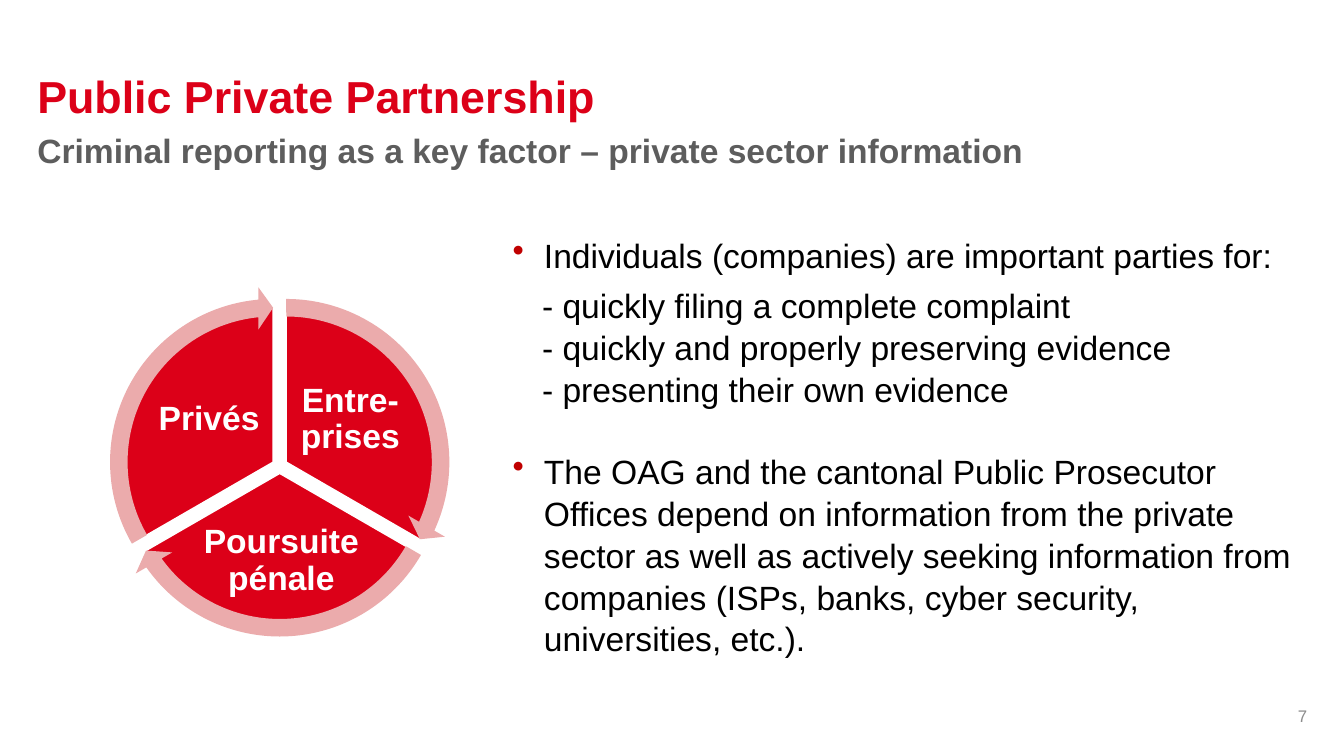
from math import cos, radians, sin

from lxml import etree
from pptx import Presentation
from pptx.dml.color import RGBColor
from pptx.enum import shapes, text
from pptx.oxml import ns
from pptx.util import Cm, Pt

COLORS = {
    "red": "DC0018", "pink": "EBABAC", "white": "FFFFFF", "black": "000000",
    "subtitle": "5D5D5D", "number": "8C8C8C", "bullet": "C00000",
}


def write(frame, wording, size=24, color="black", bold=False, align="LEFT",
          spacing=1.0, before=0, indent=0, bullet=False):
    """Fill the empty first paragraph, or add one; a newline is a line break."""
    para = frame.paragraphs[0]
    if para.runs:
        para = frame.add_paragraph()
    para.alignment = getattr(text.PP_ALIGN, align)
    para.line_spacing = spacing
    para.space_before = Pt(before)
    props = para._p.get_or_add_pPr()
    props.set("marL", str(Cm(indent)))
    props.set("indent", str(-Cm(indent) if bullet else 0))
    if bullet:
        tint = etree.SubElement(props, ns.qn("a:buClr"))
        etree.SubElement(tint, ns.qn("a:srgbClr"), val=COLORS["bullet"])
        etree.SubElement(props, ns.qn("a:buChar"), char="•")
    for row, line in enumerate(wording.split("\n")):
        if row:
            para.add_line_break()
        span = para.add_run()
        span.text = line
        span.font.name = "Arial"
        span.font.size = Pt(size)
        span.font.bold = bold
        span.font.color.rgb = RGBColor.from_string(COLORS[color])


def add_frame(left, top, width, height, anchor="MIDDLE", insets=(0.25, 0.13, 0.25, 0.13)):
    """Add a wrapping text box and return its text frame."""
    box = page.shapes.add_textbox(Cm(left), Cm(top), Cm(width), Cm(height))
    frame = box.text_frame
    frame.word_wrap = True
    frame.vertical_anchor = getattr(text.MSO_ANCHOR, anchor)
    frame.margin_left, frame.margin_top, frame.margin_right, frame.margin_bottom = map(Cm, insets)
    return frame


deck = Presentation()
deck.slide_width, deck.slide_height = Cm(33.87), Cm(19.05)
page = deck.slides.add_slide(deck.slide_layouts[6])

# Headings and page number
title = add_frame(0.94, 1.75, 32, 1.5, insets=(0, 0.13, 0.25, 0.13))
write(title, "Public Private Partnership", size=32, color="red", bold=True, spacing=0.9)
subtitle = add_frame(0.94, 3.25, 32, 1, anchor="TOP", insets=(0, 0.13, 0.25, 0.13))
write(subtitle, "Criminal reporting as a key factor – private sector information",
      color="subtitle", bold=True, spacing=0.9)
number = add_frame(24.94, 17.55, 8, 1, insets=(0.25, 0.13, 0, 0.13))
write(number, "7", size=12, color="number", align="RIGHT")

# Cycle: three sectors pushed out from a hub, each with an arrow around it
HUB_X, HUB_Y, PUSH = 7.05, 11.74, 0.19
PIE, RING = 7.85, 8.84
TURN = 0.6  # adjustment units per degree
sectors = [
    (270, "Entre-prises", (7.42, 9.4, 2.82, 2.34)),
    (30, "Poursuite pénale", (4.98, 13.11, 4.22, 2.06)),
    (150, "Privés", (3.86, 9.4, 2.82, 2.34)),
]


for kind, diameter, color in [("PIE", PIE, "red"), ("CIRCULAR_ARROW", RING, "pink")]:
    for start, label, place in sectors:
        end = (start + 120) % 360
        middle = radians(start + 60)
        left = HUB_X + PUSH * cos(middle) - diameter / 2
        top = HUB_Y + PUSH * sin(middle) - diameter / 2
        sector = page.shapes.add_shape(getattr(shapes.MSO_SHAPE, kind),
                                       Cm(left), Cm(top), Cm(diameter), Cm(diameter))
        sector.shadow.inherit = False
        sector.fill.solid()
        sector.fill.fore_color.rgb = RGBColor.from_string(COLORS[color])
        if kind == "PIE":
            settings = [start * TURN, end * TURN]
            sector.line.color.rgb = RGBColor.from_string(COLORS["white"])
            sector.line.width = Pt(1)
            caption = add_frame(*place, insets=(0.08,) * 4)
            write(caption, label, color="white", bold=True, align="CENTER", spacing=0.9)
        else:
            settings = [0.05, 3.28, end * TURN - 3.28, start * TURN, 0.06]
            sector.line.fill.background()
        for index, value in enumerate(settings):
            sector.adjustments[index] = value

# Body text
body = add_frame(12.67, 5.74, 20.27, 10.72, anchor="TOP")
write(body, "Individuals (companies) are important parties for:",
      spacing=1.04, indent=0.79, bullet=True)
write(body, "- quickly filing a complete complaint\n"
            "- quickly and properly preserving evidence\n"
            "- presenting their own evidence",
      spacing=1.04, before=6, indent=0.74)
write(body, "The OAG and the cantonal Public Prosecutor Offices depend on information "
            "from the private sector as well as actively seeking information from companies "
            "(ISPs, banks, cyber security, universities, etc.).",
      spacing=1.04, before=28.7, indent=0.79, bullet=True)

deck.save("out.pptx")
